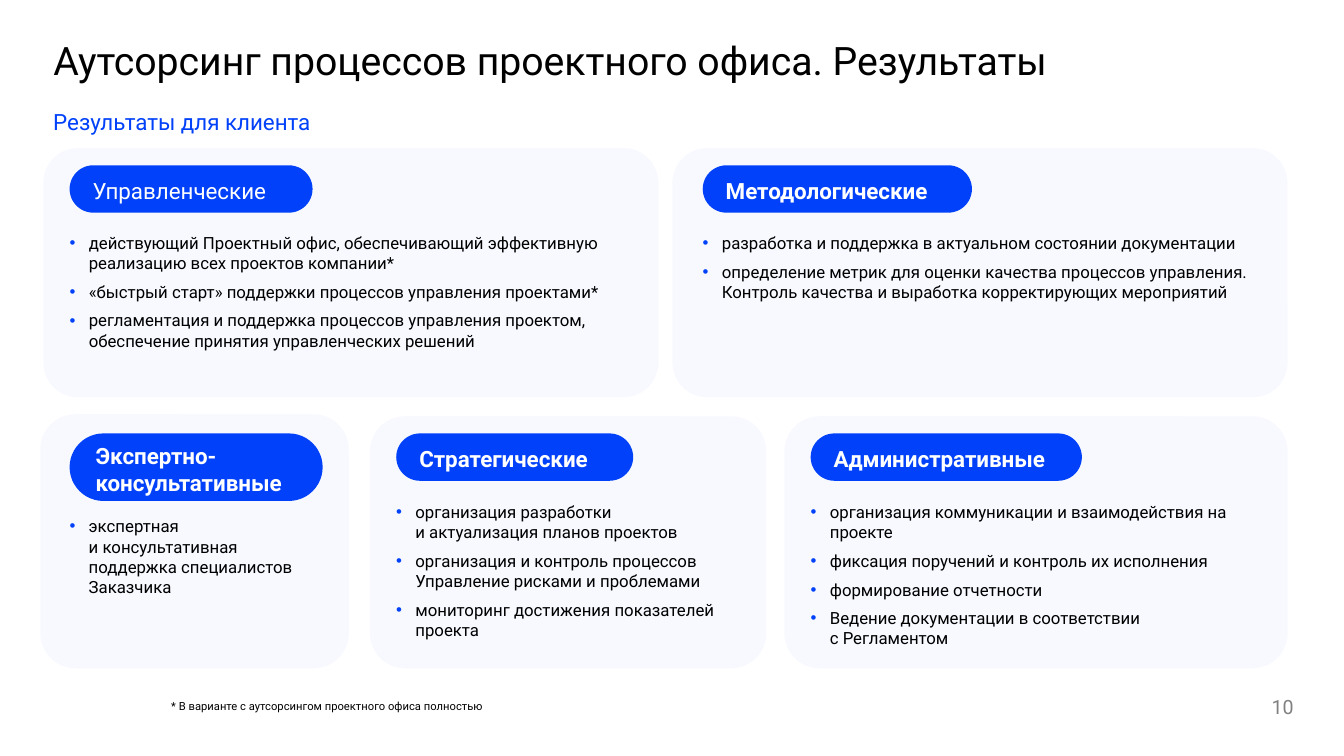
from copy import deepcopy

from lxml import etree
from pptx import Presentation
from pptx.dml.color import RGBColor
from pptx.enum.shapes import MSO_SHAPE
from pptx.enum.text import MSO_ANCHOR, PP_ALIGN
from pptx.oxml.ns import qn
from pptx.util import Emu, Pt

ROUNDED = MSO_SHAPE.ROUNDED_RECTANGLE
LEFT, RIGHT = PP_ALIGN.LEFT, PP_ALIGN.RIGHT
TOP, MIDDLE = MSO_ANCHOR.TOP, MSO_ANCHOR.MIDDLE
EMU_PER_PX = 9144  # 100 px to the inch
COLORS = {"black": "000000", "white": "FFFFFF", "blue": "0041F9",
          "card": "F7F9FF", "gray": "808080"}


def px(length):
    return Emu(length * EMU_PER_PX)


def rgb(name):
    return RGBColor.from_string(COLORS[name])


def add_bullet(paragraph, color, indent):
    """Give the paragraph a coloured bullet and a hanging indent."""
    props = paragraph._p.get_or_add_pPr()
    props.set("marL", str(px(indent)))
    props.set("indent", str(-px(indent)))
    bullet_color = etree.SubElement(props, qn("a:buClr"))
    etree.SubElement(bullet_color, qn("a:srgbClr"), val=COLORS[color])
    etree.SubElement(props, qn("a:buFont"), typeface="Arial")
    etree.SubElement(props, qn("a:buChar"), char="•")


def write_text(frame, paragraphs, *, size, color="black", bold=False, align=LEFT,
               anchor=TOP, insets=(10, 5, 10, 5), bullet=None, gap=0):
    """Fill a text frame; a line feed within a paragraph is a line break."""
    frame.word_wrap = True
    frame.vertical_anchor = anchor
    (frame.margin_left, frame.margin_top,
     frame.margin_right, frame.margin_bottom) = map(px, insets)
    for index, text in enumerate(paragraphs):
        paragraph = frame.add_paragraph() if index else frame.paragraphs[0]
        paragraph.text = text
        paragraph.alignment = align
        if bullet:
            add_bullet(paragraph, bullet, 19)
        if index:
            paragraph.space_before = Pt(gap)
        for run in paragraph.runs:
            run.font.name = "Roboto"
            run.font.size = Pt(size)
            run.font.bold = bold
            run.font.color.rgb = rgb(color)
        # Line breaks take the format of the text around them
        for line_break in paragraph._p.findall(qn("a:br")):
            line_break.append(deepcopy(paragraph.runs[0]._r.rPr))


class ResultsSlide:
    def __init__(self, deck):
        self.slide = deck.slides.add_slide(deck.slide_layouts[6])

    def text(self, box, *paragraphs, **style):
        label = self.slide.shapes.add_textbox(*map(px, box))
        write_text(label.text_frame, paragraphs, **style)

    def rounded(self, box, fill, rounding):
        panel = self.slide.shapes.add_shape(ROUNDED, *map(px, box))
        panel.adjustments[0] = rounding
        panel.shadow.inherit = False
        panel.fill.solid()
        panel.fill.fore_color.rgb = rgb(fill)
        panel.line.fill.background()
        return panel

    def pill(self, box, heading, bold):
        pill = self.rounded(box, "blue", 0.5)
        write_text(pill.text_frame, [heading], size=16, color="white", bold=bold,
                   anchor=MIDDLE, insets=(16, 8, 4, 5))

    def card(self, box, heading, pill_box, list_box, results, bold=True):
        self.rounded(box, "card", 0.139)
        self.pill(pill_box, heading, bold)
        self.text(list_box, *results, size=12, insets=(0, 0, 0, 0),
                  bullet="blue", gap=6)


# Cards: outline, heading, heading pill, list area, results
CARDS = [
    ((43, 147, 610, 247), "Управленческие", (69, 164, 241, 47), (69, 231, 558, 138),
     ["действующий Проектный офис, обеспечивающий эффективную реализацию "
      "всех проектов компании*",
      "«быстрый старт» поддержки процессов управления проектами*",
      "регламентация и поддержка процессов управления проектом, "
      "обеспечение принятия управленческих решений"], False),
    ((667, 147, 610, 247), "Методологические", (697, 164, 267, 47), (697, 231, 567, 138),
     ["разработка и поддержка в актуальном состоянии документации",
      "определение метрик для оценки качества процессов управления. "
      "Контроль качества и выработка корректирующих мероприятий"]),
    ((40, 411, 306, 252), "Экспертно-консультативные", (69, 430, 251, 67),
     (69, 512, 233, 101),
     ["экспертная\nи консультативная поддержка специалистов Заказчика"]),
    ((367, 413, 393, 250), "Стратегические", (393, 430, 235, 47), (393, 498, 343, 138),
     ["организация разработки\nи актуализация планов проектов",
      "организация и контроль процессов Управление рисками и проблемами",
      "мониторинг достижения показателей проекта"]),
    ((778, 413, 499, 250), "Административные", (804, 430, 269, 47), (804, 498, 449, 146),
     ["организация коммуникации и взаимодействия на проекте",
      "фиксация поручений и контроль их исполнения",
      "формирование отчетности",
      "Ведение документации в соответствии\nс Регламентом"]),
]


def main():
    deck = Presentation()
    deck.slide_width, deck.slide_height = px(1333), px(750)
    slide = ResultsSlide(deck)

    # Title and subtitle
    slide.text((53, 36, 1261, 47), "Аутсорсинг процессов проектного офиса. Результаты",
               size=28, insets=(0, 0, 0, 0))
    slide.text((43, 102, 306, 37), "Результаты для клиента", size=16, color="blue")

    # Groups of results
    for card in CARDS:
        slide.card(*card)

    # Footnote and page number
    slide.text((160, 689, 560, 24),
               "* В варианте с аутсорсингом проектного офиса полностью", size=8)
    slide.text((993, 684, 300, 40), "10", size=14, color="gray", align=RIGHT)

    deck.save("out.pptx")


if __name__ == "__main__":
    main()
